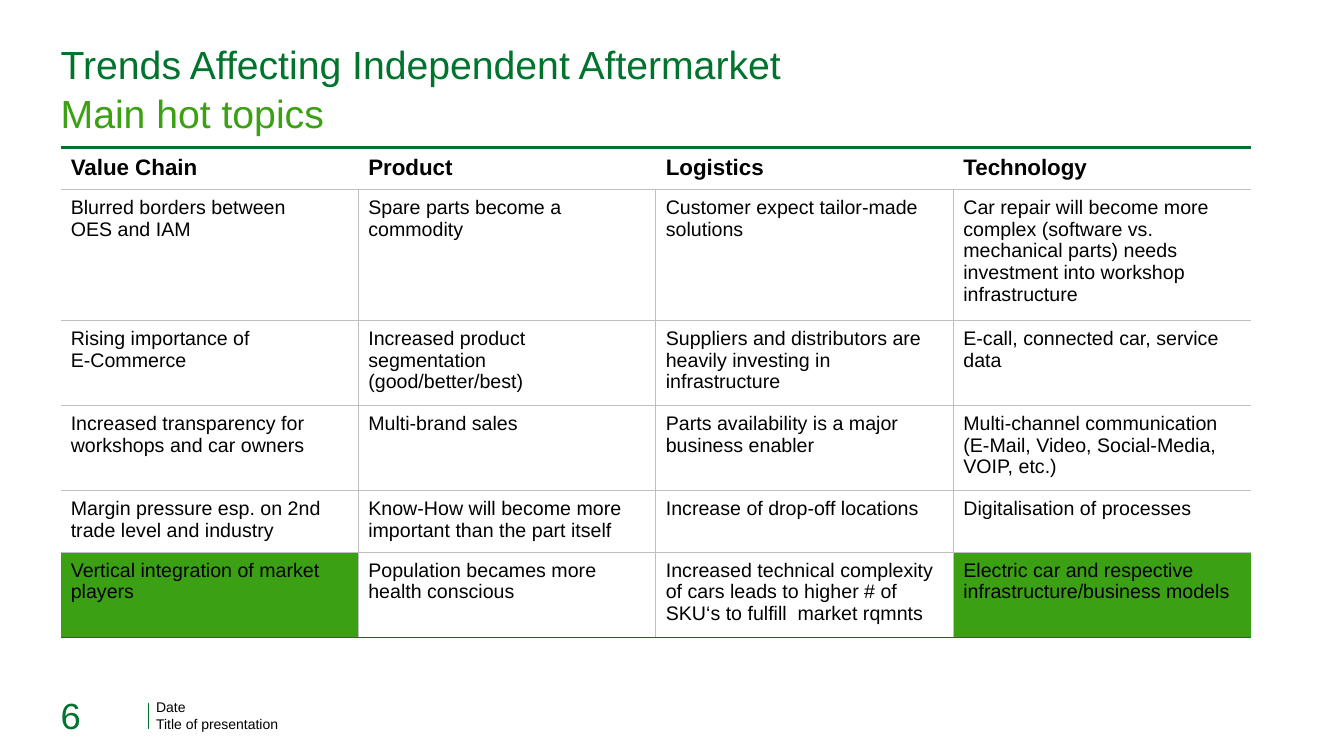
"""Build the aftermarket trends slide with its table of hot topics."""
import pptx
import pptx.util
import pptx.dml.color
import pptx.enum.shapes
import pptx.enum.text
from lxml import etree

Pt = pptx.util.Pt
RGB = pptx.dml.color.RGBColor.from_string
ANCHOR = pptx.enum.text.MSO_ANCHOR
NS = "http://schemas.openxmlformats.org/drawingml/2006/main"
COLORS = {"dark": "00732D", "green": "3CA014", "grey": "BFBFBF",
          "black": "000000", "white": "FFFFFF"}
LEFT = 43.4


def write(tf, text, size, color, anchor=ANCHOR.TOP, margins=(0, 0, 0, 0), bold=False, spacing=1.0):
    tf.word_wrap = True
    tf.vertical_anchor = anchor
    tf.margin_left, tf.margin_top, tf.margin_right, tf.margin_bottom = map(Pt, margins)
    for i, para in enumerate(text.split("\n")):
        p = tf.add_paragraph() if i else tf.paragraphs[0]
        p.alignment = pptx.enum.text.PP_ALIGN.LEFT
        p.line_spacing = spacing
        p.space_before = p.space_after = Pt(0)
        for j, line in enumerate(para.split("\v")):
            if j:
                p.add_line_break()
            r = p.add_run()
            r.text = line
            r.font.name = "Arial"
            r.font.size = Pt(size)
            r.font.bold = bold
            r.font.color.rgb = RGB(COLORS[color])


def border(cell, side, color, width):
    ln = etree.SubElement(cell._tc.get_or_add_tcPr(), f"{{{NS}}}ln{side}", w=str(Pt(width)))
    if width:
        fill = etree.SubElement(ln, f"{{{NS}}}solidFill")
        etree.SubElement(fill, f"{{{NS}}}srgbClr", val=COLORS[color])
    else:
        etree.SubElement(ln, f"{{{NS}}}noFill")


prs = pptx.Presentation()
prs.slide_width, prs.slide_height = Pt(960.5), Pt(540)
s = prs.slides.add_slide(prs.slide_layouts[5])

title = s.shapes.title
title.left, title.top, title.width, title.height = Pt(LEFT), Pt(26), Pt(811), Pt(34)
title.fill.solid()
title.fill.fore_color.rgb = RGB(COLORS["white"])
write(title.text_frame, "Trends Affecting Independent Aftermarket", 28, "dark",
      margins=(0, 3, 0, 0))

texts = [
    ("Main hot topics", LEFT, 60.5, 811, 34, 28, "green", ANCHOR.TOP, 3),
    ("6", LEFT, 499, 63, 27.5, 26, "dark", ANCHOR.BOTTOM, 0),
    ("Date", 111.6, 499.3, 204, 11.5, 10, "black", ANCHOR.MIDDLE, 0),
    ("Title of presentation", 111.6, 511, 505, 11.5, 10, "black", ANCHOR.MIDDLE, 0),
]
for text, x, y, w, h, size, color, anchor, inset in texts:
    sp = s.shapes.add_textbox(Pt(x), Pt(y), Pt(w), Pt(h))
    write(sp.text_frame, text, size, color, anchor, (0, inset, 0, 0))

line = s.shapes.add_connector(pptx.enum.shapes.MSO_CONNECTOR.STRAIGHT,
                              Pt(106), Pt(501.8), Pt(106), Pt(520.6))
line.line.color.rgb = RGB(COLORS["dark"])
line.line.width = Pt(0.5)
etree.SubElement(line._element.spPr, f"{{{NS}}}effectLst")

rows = [
    ["Value Chain", "Product", "Logistics", "Technology"],
    ["Blurred borders between\nOES and IAM", "Spare parts become a commodity",
     "Customer expect tailor-made solutions",
     "Car repair will become more complex (software vs. mechanical parts) "
     "needs investment into workshop infrastructure"],
    ["Rising importance of\nE-Commerce", "Increased product segmentation (good/better/best)",
     "Suppliers and distributors are heavily investing in infrastructure",
     "E-call, connected car, service data"],
    ["Increased transparency for workshops and car owners", "Multi-brand sales",
     "Parts availability is a major business enabler",
     "Multi-channel communication\v(E-Mail, Video, Social-Media, VOIP, etc.)"],
    ["Margin pressure esp. on 2nd trade level and industry",
     "Know-How will become more important than the part itself",
     "Increase of drop-off locations", "Digitalisation of processes"],
    ["Vertical integration of market players", "Population becames more health conscious",
     "Increased technical complexity of cars leads to higher # of "
     "SKU‘s to fulfill  market rqmnts",
     "Electric car and respective infrastructure/business models"],
]
heights = [29.3, 90.1, 58.6, 58.6, 43.3, 58.2]
highlighted = {(5, 0), (5, 3)}
last_row, last_col = len(rows) - 1, len(rows[0]) - 1

table = s.shapes.add_table(len(rows), len(rows[0]), Pt(LEFT), Pt(105.5),
                           Pt(850.6), Pt(sum(heights))).table
table.first_row = table.horz_banding = False
for col in table.columns:
    col.width = Pt(212.65)
for i, (row, height) in enumerate(zip(rows, heights)):
    table.rows[i].height = Pt(height)
    for j, text in enumerate(row):
        cell = table.cell(i, j)
        write(cell.text_frame, text, 14 if i else 16, "black", spacing=0.98, bold=i == 0)
        cell.margin_left = cell.margin_right = Pt(7.2)
        cell.margin_top = cell.margin_bottom = Pt(5.6)
        cell.vertical_anchor = ANCHOR.TOP
        border(cell, "L", "grey", 0.75 if i and j else 0)
        border(cell, "R", "grey", 0.75 if i and j < last_col else 0)
        border(cell, "T", "grey" if i else "dark", 0.75 if i else 2.25)
        border(cell, "B", "dark" if i == last_row else "grey", 0.75)
        if (i, j) in highlighted:
            cell.fill.solid()
            cell.fill.fore_color.rgb = RGB(COLORS["green"])
        else:
            cell.fill.background()

prs.save("out.pptx")
